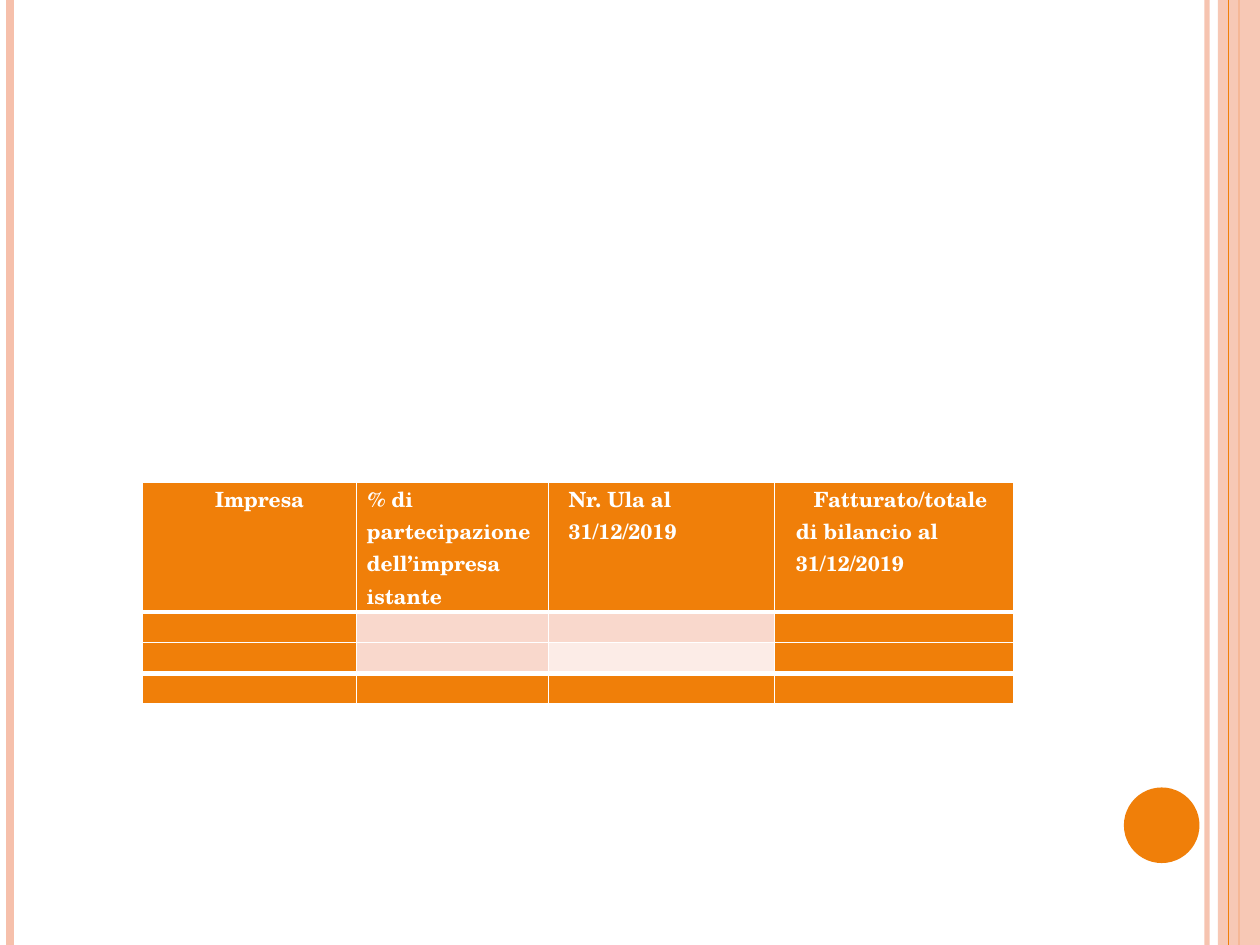
from dataclasses import dataclass

import pptx
import pptx.dml.color
import pptx.enum.shapes
import pptx.oxml
import pptx.oxml.ns
import pptx.util
from lxml import etree

Pt = pptx.util.Pt
qn = pptx.oxml.ns.qn
FONT = "TeX Gyre Schola"
ORANGE, PEACH, WHITE = "F07F09", "F6C0AB", "FFFFFF"
ROSE, BLUSH = "F9D8CC", "FCECE7"


@dataclass
class Rule:
    x: float
    width: float
    color: str
    alpha: int = 100


@dataclass
class Head:
    runs: tuple
    left: float
    indent: float
    before: float


RULES = [
    Rule(689.76, 3, PEACH, 93),
    Rule(5.76, 4.5, PEACH),
    Rule(707.76, 1.5, ORANGE),
]
EDGE = Rule(702, 0.75, ORANGE)
HEADS = [
    Head(("Impresa",), 41.76, 0, 7.3),
    Head(("% di partecipazione ", "dell’impresa ", "istante"), 5.76, 0.72, 0.1),
    Head(("Nr. Ula al 31/12/2019",), 11.52, 0, 7.3),
    Head(("Fatturato/totale di bilancio al 31/12/2019",), 12.24, 10.08, 0.1),
]
FILLS = [
    [ORANGE] * 4,
    [ORANGE, ROSE, ROSE, ORANGE],
    [ORANGE, ROSE, BLUSH, ORANGE],
    [ORANGE] * 4,
]
WIDTHS = [122.8, 109.6, 129.2, 136.8]
HEIGHTS = [73.4, 17.5, 17.5, 17.5]
THICK = {(0, "B"), (1, "T"), (2, "B"), (3, "T")}


def paint(target, color: str, alpha: int = 100) -> None:
    target.solid()
    target.fore_color.rgb = pptx.dml.color.RGBColor.from_string(color)
    if alpha < 100:
        tone = target._xPr.find(".//" + qn("a:srgbClr"))
        etree.SubElement(tone, qn("a:alpha"), val=str(alpha * 1000))


def draw_rule(shapes, rule: Rule):
    line = shapes.add_connector(
        pptx.enum.shapes.MSO_CONNECTOR.STRAIGHT, Pt(rule.x), Pt(0), Pt(rule.x), Pt(540)
    )
    line.line.width = Pt(rule.width)
    paint(line.line.fill, rule.color, rule.alpha)
    etree.SubElement(line._element.spPr, qn("a:effectLst"))
    return line


def draw_shape(shapes, kind, box: tuple, color: str, alpha: int = 100):
    shape = shapes.add_shape(kind, *map(Pt, box))
    shape.shadow.inherit = False
    paint(shape.fill, color, alpha)
    shape.line.fill.background()
    return shape


def frame(cell, row: int) -> None:
    props = cell._tc.get_or_add_tcPr()
    for spot, side in enumerate("LRTB"):
        width = 3 if (row, side) in THICK else 1
        edge = etree.Element(qn("a:ln" + side), w=str(Pt(width)))
        fill = etree.SubElement(edge, qn("a:solidFill"))
        etree.SubElement(fill, qn("a:srgbClr"), val=WHITE)
        props.insert(spot, edge)


def write(cell, head: Head) -> None:
    para = cell.text_frame.paragraphs[0]
    para.space_before = Pt(head.before)
    props = para._p.get_or_add_pPr()
    props.set("marL", str(Pt(head.left)))
    props.set("indent", str(Pt(head.indent)))
    for text in head.runs:
        run = para.add_run()
        run.text = text
        run.font.name = FONT
        run.font.size = Pt(12)
        run.font.bold = True
        paint(run.font.fill, WHITE)


def draw_table(shapes) -> None:
    table = shapes.add_table(
        len(HEIGHTS), len(WIDTHS), Pt(81), Pt(275.8), Pt(sum(WIDTHS)), Pt(sum(HEIGHTS))
    ).table
    table.first_row = table.horz_banding = False
    for col, width in zip(table.columns, WIDTHS):
        col.width = Pt(width)
    for i, (row, height) in enumerate(zip(table.rows, HEIGHTS)):
        row.height = Pt(height)
        for j, cell in enumerate(row.cells):
            cell.margin_left = cell.margin_top = cell.margin_bottom = Pt(0)
            cell.margin_right = Pt(4)
            paint(cell.fill, FILLS[i][j])
            frame(cell, i)
            if i == 0:
                write(cell, HEADS[j])
            else:
                para = cell.text_frame.paragraphs[0]._p
                etree.SubElement(para, qn("a:endParaRPr"), sz="1000")


def main() -> None:
    deck = pptx.Presentation()
    deck.slide_width, deck.slide_height = Pt(720), Pt(540)
    shapes = deck.slides.add_slide(deck.slide_layouts[6]).shapes
    kinds = pptx.enum.shapes.MSO_SHAPE
    lines = [draw_rule(shapes, rule) for rule in RULES]
    band = draw_shape(shapes, kinds.RECTANGLE, (696, 0, 24, 540), PEACH, 87)
    lines[-1].begin_connect(band, 0)
    lines[-1].end_connect(band, 2)
    draw_rule(shapes, EDGE)
    draw_shape(shapes, kinds.OVAL, (642.24, 450, 43.2, 43.2), ORANGE)
    draw_table(shapes)
    deck.save("out.pptx")


if __name__ == "__main__":
    main()
